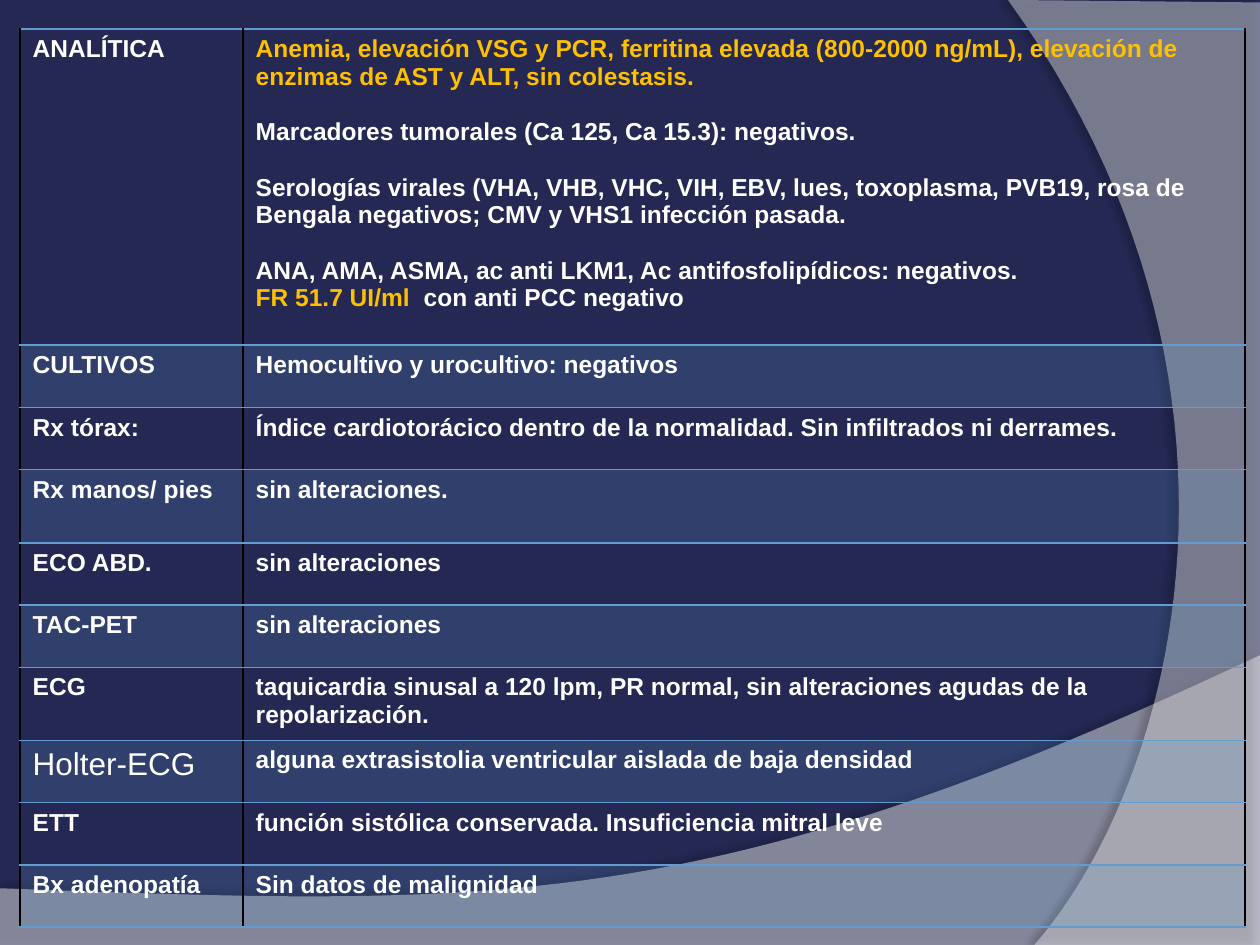
from lxml.etree import SubElement
from pptx import Presentation
from pptx.dml.color import RGBColor
from pptx.oxml import parse_xml
from pptx.oxml.ns import nsdecls, qn
from pptx.util import Inches, Pt

COLORS = {"background": "242852", "white": "FFFFFF", "highlight": "FFC000",
          "band": "629DD1", "black": "000000"}
FONT = "Arial"

# Lab findings: (space before in points, runs of (text, color))
LAB_FINDINGS = [
    (0, [("Anemia, elevación VSG y PCR, ferritina elevada (800-2000 ng/mL), "
          "elevación de enzimas de AST y ALT, sin colestasis.", "highlight")]),
    (16, [("Marcadores tumorales (Ca 125, Ca 15.3): negativos.", "white")]),
    (16, [("Serologías virales (VHA, VHB, VHC, VIH, EBV, lues, toxoplasma, PVB19, "
           "rosa de Bengala negativos; CMV y VHS1 infección pasada.", "white")]),
    (16, [("ANA, AMA, ASMA, ac anti LKM1, Ac antifosfolipídicos: negativos.", "white")]),
    (0, [("FR 51.7 UI/ml  ", "highlight"), ("con anti PCC negativo", "white")]),
]

SHORT, TALL = Pt(35.6), Inches(0.58)
# Test, result, row height
TESTS = [
    ("ANALÍTICA", LAB_FINDINGS, Inches(2.51)),
    ("CULTIVOS", "Hemocultivo y urocultivo: negativos", SHORT),
    ("Rx tórax:", "Índice cardiotorácico dentro de la normalidad. "
                  "Sin infiltrados ni derrames.", SHORT),
    ("Rx manos/ pies", "sin alteraciones.", TALL),
    ("ECO ABD.", "sin alteraciones", SHORT),
    ("TAC-PET", "sin alteraciones", SHORT),
    ("ECG", "taquicardia sinusal a 120 lpm, PR normal, sin alteraciones agudas "
            "de la repolarización.", TALL),
    ("Holter-ECG", "alguna extrasistolia ventricular aislada de baja densidad", SHORT),
    ("ETT", "función sistólica conservada. Insuficiencia mitral leve", SHORT),
    ("Bx adenopatía", "Sin datos de malignidad", SHORT),
]
LARGE_LABEL = "Holter-ECG"
COLUMN_WIDTHS = [1.77, 7.95]

# Background waves: straight points, then a Bezier curve from the last one
WAVES = [
    {"points": [(0, 7.05), (0, 7.51), (10, 7.51), (10, 5.2)],
     "curve": [(5.59, 7.29), (3.91, 7.19), (0, 7.05)],
     "opacity": 45, "shadow": {"opacity": 35, "blur": 4, "distance": 3.5, "angle": 270}},
    {"points": [(8, 0), (10, 0.02), (10, 7.5), (8.21, 7.5)],
     "curve": [(9.35, 6.19), (10.17, 3), (8, 0)],
     "opacity": 40, "shadow": {"opacity": 45, "blur": 4, "distance": 4, "angle": 180}},
]


def set_fill(fill, color, opacity=100):
    fill.solid()
    fill.fore_color.rgb = RGBColor.from_string(COLORS[color])
    if opacity < 100:
        element = fill._xPr.find(qn("a:solidFill"))[0]
        SubElement(element, qn("a:alpha"), val=str(opacity * 1000))


def bezier(start, controls, steps=48):
    corners = [start, *controls]
    for step in range(1, steps + 1):
        t = step / steps
        weights = [(1 - t) ** 3, 3 * t * (1 - t) ** 2, 3 * t ** 2 * (1 - t), t ** 3]
        yield tuple(sum(w * corner[axis] for w, corner in zip(weights, corners))
                    for axis in (0, 1))


def add_wave(slide, wave):
    outline = wave["points"] + list(bezier(wave["points"][-1], wave["curve"]))
    outline = [(Inches(x), Inches(y)) for x, y in outline]
    builder = slide.shapes.build_freeform(*outline[0])
    builder.add_line_segments(outline[1:], close=True)
    shape = builder.convert_to_shape()
    set_fill(shape.fill, "white", wave["opacity"])
    shape.line.fill.background()
    shape.shadow.inherit = False
    shadow = wave["shadow"]
    effects = shape._element.spPr.find(qn("a:effectLst"))
    effects.append(parse_xml(
        f'<a:outerShdw {nsdecls("a")} blurRad="{Pt(shadow["blur"])}" '
        f'dist="{Pt(shadow["distance"])}" dir="{shadow["angle"] * 60000}" '
        f'algn="ctr" rotWithShape="0"><a:srgbClr val="{COLORS["black"]}">'
        f'<a:alpha val="{shadow["opacity"] * 1000}"/></a:srgbClr></a:outerShdw>'))


def set_borders(cell):
    properties = cell._tc.get_or_add_tcPr()
    sides = [("lnL", "black"), ("lnR", "black"), ("lnT", "band"), ("lnB", "band")]
    for index, (side, color) in enumerate(sides):
        properties.insert(index, parse_xml(
            f'<a:{side} {nsdecls("a")} w="{Pt(0.96)}"><a:solidFill>'
            f'<a:srgbClr val="{COLORS[color]}"/></a:solidFill></a:{side}>'))


def fill_cell(cell, content, banded):
    if isinstance(content, str):
        content = [(0, [(content, "white")])]
    for index, (space, runs) in enumerate(content):
        frame = cell.text_frame
        paragraph = frame.add_paragraph() if index else frame.paragraphs[0]
        paragraph.space_before = Pt(space)
        for text, color in runs:
            run = paragraph.add_run()
            run.text = text
            run.font.name = FONT
            run.font.size = Pt(18 if text == LARGE_LABEL else 14)
            run.font.bold = text != LARGE_LABEL
            run.font.color.rgb = RGBColor.from_string(COLORS[color])
    if banded:
        set_fill(cell.fill, "band", 20)
    else:
        cell.fill.background()
    set_borders(cell)


def main():
    presentation = Presentation()
    presentation.slide_width, presentation.slide_height = Inches(10), Inches(7.5)
    slide = presentation.slides.add_slide(presentation.slide_layouts[6])

    # Background
    set_fill(slide.background.fill, "background")
    for wave in WAVES:
        add_wave(slide, wave)

    # Table of tests
    table = slide.shapes.add_table(
        len(TESTS), len(COLUMN_WIDTHS), Inches(0.16), Inches(0.23),
        Inches(sum(COLUMN_WIDTHS)), sum(height for *_, height in TESTS)).table
    table.first_row = table.horz_banding = False
    for column, width in zip(table.columns, COLUMN_WIDTHS):
        column.width = Inches(width)
    for index, (label, result, height) in enumerate(TESTS):
        table.rows[index].height = height
        for cell, content in zip(table.rows[index].cells, (label, result)):
            fill_cell(cell, content, banded=index % 2 == 1)

    presentation.save("out.pptx")


if __name__ == "__main__":
    main()
